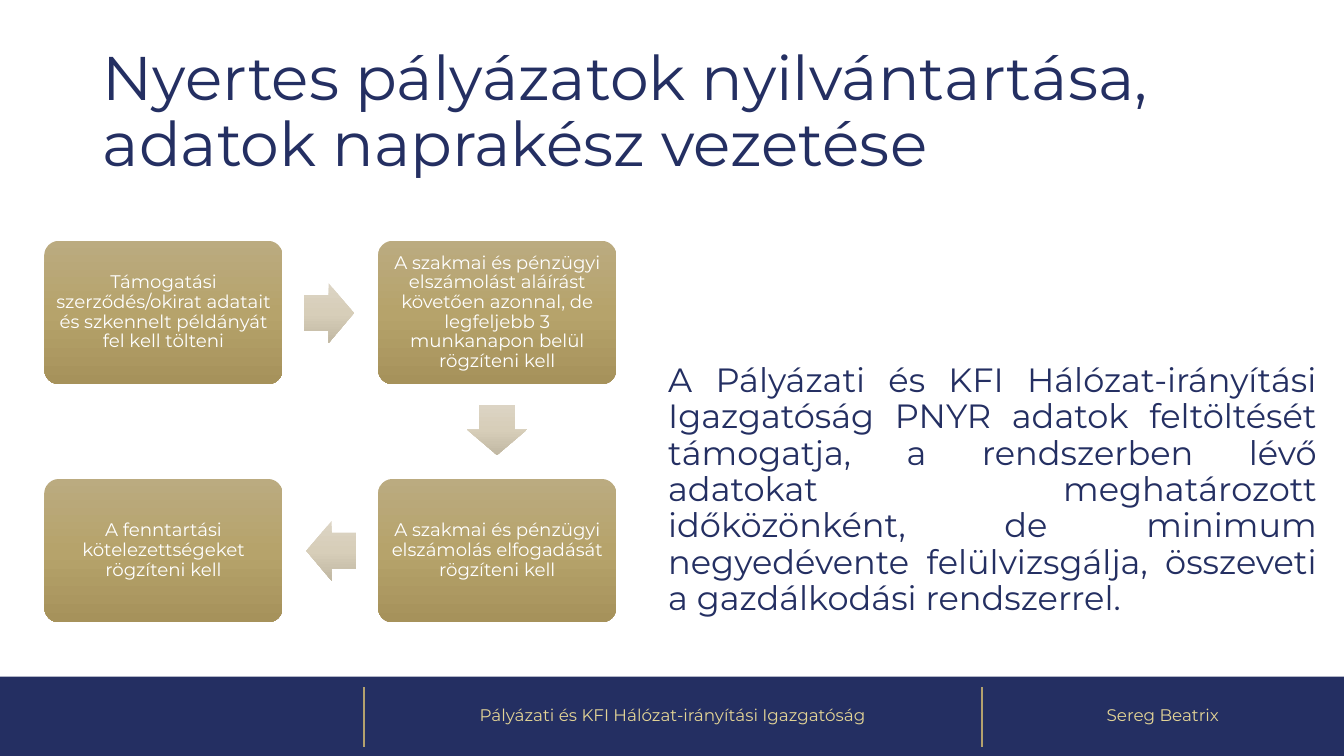
import pptx
import pptx.dml.color
import pptx.enum.shapes
import pptx.enum.text
import pptx.oxml
import pptx.oxml.ns
import pptx.util
from pptx.util import Cm

SHAPE = pptx.enum.shapes.MSO_SHAPE
ALIGN = pptx.enum.text.PP_ALIGN
ANCHOR = pptx.enum.text.MSO_ANCHOR

NAVY, GOLD, PALE_GOLD, WHITE = "242F62", "B3A16E", "E3D496", "FFFFFF"
CARD_STOPS = ("BBAB80", "B6A36B", "A6925B")
ARROW_STOPS = ("DCD4C4", "D7CEB9", "C1B8A3")

SLIDE_W, SLIDE_H = 33.87, 19.05
FOOTER_TOP, FOOTER_H = 17.05, 2
DIVIDERS = (9.17, 24.74)
CARD_W, CARD_H = 6, 3.61
COLUMNS, ROWS = (1.12, 9.53), (6.07, 12.07)

# Column, row and text of each step, clockwise
STEPS = (
    (0, 0, "Támogatási szerződés/okirat adatait és szkennelt példányát fel kell tölteni"),
    (1, 0, "A szakmai és pénzügyi elszámolást aláírást követően azonnal, de "
           "legfeljebb 3 munkanapon belül rögzíteni kell"),
    (1, 1, "A szakmai és pénzügyi elszámolás elfogadását rögzíteni kell"),
    (0, 1, "A fenntartási kötelezettségeket rögzíteni kell"),
)
# Left, top and rotation of the arrows between the steps
ARROWS = ((7.65, 7.14, 0), (11.89, 10.08, 90), (7.72, 13.13, 180))


def rgb(value):
    return pptx.dml.color.RGBColor.from_string(value)


def write(tf, text, size, color=NAVY, align=ALIGN.LEFT, anchor=ANCHOR.MIDDLE):
    tf.word_wrap = True
    tf.vertical_anchor = anchor
    p = tf.paragraphs[0]
    p.alignment = align
    p.line_spacing = 0.9
    r = p.add_run()
    r.text = text
    r.font.name = "Montserrat"
    r.font.size = pptx.util.Pt(size)
    r.font.color.rgb = rgb(color)


def add_text(s, text, left, top, width, height, **style):
    box = s.shapes.add_textbox(Cm(left), Cm(top), Cm(width), Cm(height))
    write(box.text_frame, text, **style)


def add_shape(s, kind, left, top, width, height):
    sp = s.shapes.add_shape(kind, Cm(left), Cm(top), Cm(width), Cm(height))
    sp.shadow.inherit = False
    sp.line.fill.background()
    return sp


def fill_gradient(sp, stops):
    """Fill from top to bottom with three evenly spaced colours."""
    marks = "".join(
        f'<a:gs pos="{i * 50000}"><a:srgbClr val="{c}"/></a:gs>'
        for i, c in enumerate(stops))
    grad = pptx.oxml.parse_xml(
        f'<a:gradFill {pptx.oxml.ns.nsdecls("a")} rotWithShape="0">'
        f'<a:gsLst>{marks}</a:gsLst><a:lin ang="5400000" scaled="0"/></a:gradFill>')
    geometry = sp.element.spPr.find(pptx.oxml.ns.qn("a:prstGeom"))
    geometry.addnext(grad)


def add_card(s, left, top, text):
    sp = add_shape(s, SHAPE.ROUNDED_RECTANGLE, left, top, CARD_W, CARD_H)
    sp.adjustments[0] = 0.1
    fill_gradient(sp, CARD_STOPS)
    tf = sp.text_frame
    tf.margin_left = tf.margin_right = tf.margin_top = tf.margin_bottom = Cm(0.13)
    write(tf, text, size=13, color=WHITE, align=ALIGN.CENTER)


def add_arrow(s, left, top, rotation):
    sp = add_shape(s, SHAPE.RIGHT_ARROW, left, top, 1.27, 1.5)
    sp.adjustments[0], sp.adjustments[1] = 0.6, 0.5
    sp.rotation = rotation
    fill_gradient(sp, ARROW_STOPS)


def add_divider(s, x):
    line = s.shapes.add_connector(
        pptx.enum.shapes.MSO_CONNECTOR.STRAIGHT, Cm(x), Cm(17.32), Cm(x), Cm(18.82))
    line.line.color.rgb = rgb(GOLD)
    line.line.width = pptx.util.Pt(1.5)
    line.element.spPr.append(
        pptx.oxml.parse_xml(f'<a:effectLst {pptx.oxml.ns.nsdecls("a")}/>'))


def add_footer(s):
    band = add_shape(s, SHAPE.RECTANGLE, 0, FOOTER_TOP, SLIDE_W, FOOTER_H)
    band.fill.solid()
    band.fill.fore_color.rgb = rgb(NAVY)
    for x in DIVIDERS:
        add_divider(s, x)
    labels = ("Pályázati és KFI Hálózat-irányítási Igazgatóság", "Sereg Beatrix")
    for text, left, right in zip(labels, DIVIDERS, (DIVIDERS[1], SLIDE_W)):
        add_text(s, text, left, FOOTER_TOP, right - left, FOOTER_H,
                 size=12, color=PALE_GOLD, align=ALIGN.CENTER)


def main():
    prs = pptx.Presentation()
    prs.slide_width, prs.slide_height = Cm(SLIDE_W), Cm(SLIDE_H)
    s = prs.slides.add_slide(prs.slide_layouts[6])

    add_footer(s)

    # Title and explanation
    add_text(s, "Nyertes pályázatok nyilvántartása, adatok naprakész vezetése",
             2.34, 1.02, 29.21, 3.68, size=44)
    add_text(s, "A Pályázati és KFI Hálózat-irányítási Igazgatóság PNYR adatok "
                "feltöltését támogatja, a rendszerben lévő adatokat meghatározott "
                "időközönként, de minimum negyedévente felülvizsgálja, összeveti "
                "a gazdálkodási rendszerrel.",
             16.59, 9.04, 16.84, 6.88, size=24, align=ALIGN.JUSTIFY, anchor=ANCHOR.TOP)

    # Process steps
    for column, row, text in STEPS:
        add_card(s, COLUMNS[column], ROWS[row], text)
    for left, top, rotation in ARROWS:
        add_arrow(s, left, top, rotation)

    prs.save("out.pptx")


if __name__ == "__main__":
    main()
